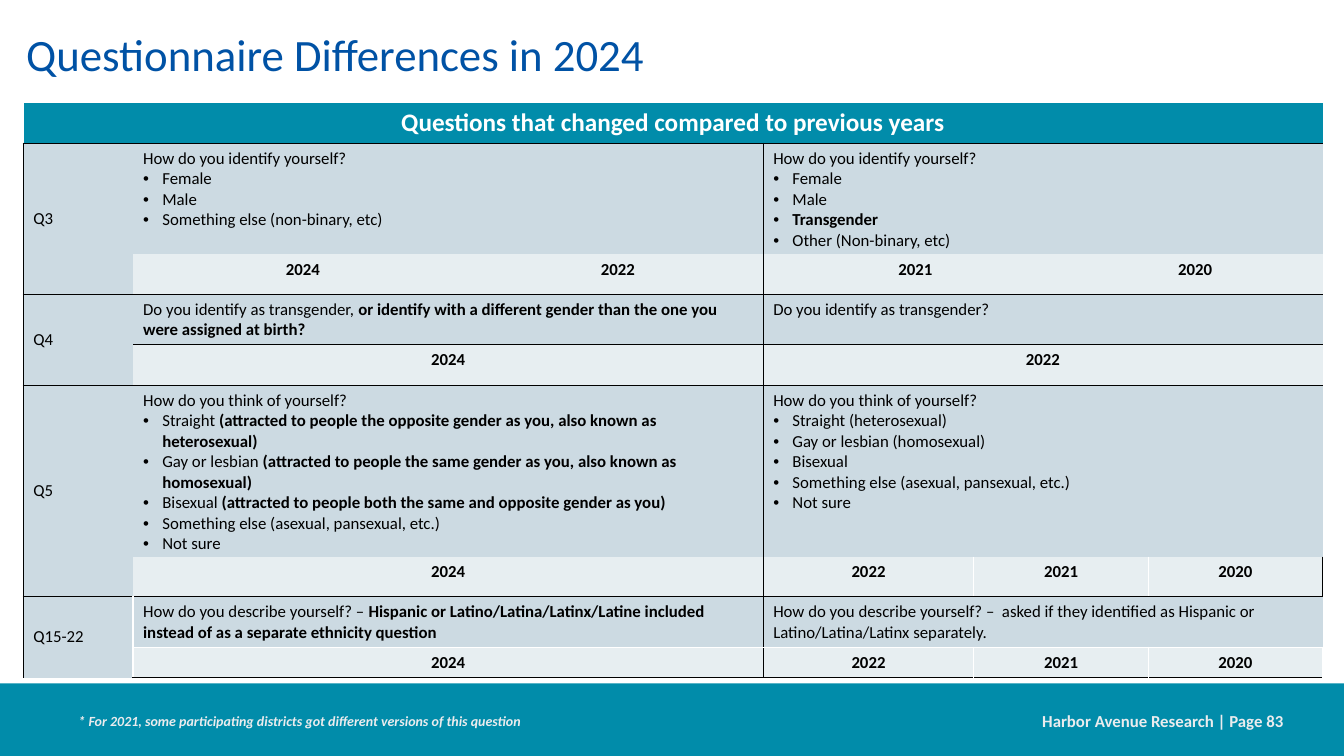
from dataclasses import dataclass

from lxml.etree import SubElement
from pptx import Presentation
from pptx.dml.color import RGBColor
from pptx.enum.shapes import MSO_SHAPE
from pptx.enum.text import MSO_ANCHOR as Anchor, PP_ALIGN as Align
from pptx.oxml.ns import qn
from pptx.util import Inches, Pt

TITLE = "Questionnaire Differences in 2024"
HEADING = "Questions that changed compared to previous years"
FOOTNOTE = "* For 2021, some participating districts got different versions of this question"
PAGE_LABEL = "Harbor Avenue Research | Page 83"

# Text after "|" is bold. Borders run left, right, top, bottom: K dark, W light, - none.
QUESTIONS = [
    ("Q3", "K-KK",
     [(1, 2, "-KK-", ["How do you identify yourself?", "Female", "Male",
                      "Something else (non-binary, etc)"]),
      (3, 4, "KKK-", ["How do you identify yourself?", "Female", "Male",
                      "|Transgender", "Other (Non-binary, etc)"])],
     [(1, 1, "---K", ["|2024"]), (2, 1, "-K-K", ["|2022"]),
      (3, 2, "K--K", ["|2021"]), (5, 2, "---K", ["|2020"])]),
    ("Q4", "K-KK",
     [(1, 2, "-KKK", ["Do you identify as transgender, |or identify with a different "
                      "gender than the one you were assigned at birth?"]),
      (3, 4, "KWKK", ["Do you identify as transgender?"])],
     [(1, 2, "-KKK", ["|2024"]), (3, 4, "KWKK", ["|2022"])]),
    ("Q5", "K-KK",
     [(1, 2, "-KK-", ["How do you think of yourself?",
                      "Straight |(attracted to people the opposite gender as you, "
                      "also known as heterosexual)",
                      "Gay or lesbian |(attracted to people the same gender as you, "
                      "also known as homosexual)",
                      "Bisexual |(attracted to people both the same and opposite gender as you)",
                      "Something else (asexual, pansexual, etc.)", "Not sure"]),
      (3, 4, "KWK-", ["How do you think of yourself?", "Straight (heterosexual)",
                      "Gay or lesbian (homosexual)", "Bisexual",
                      "Something else (asexual, pansexual, etc.)", "Not sure"])],
     [(1, 2, "-K-K", ["|2024"]), (3, 1, "KW-K", ["|2022"]),
      (4, 2, "WW-K", ["|2021"]), (6, 1, "WK-K", ["|2020"])]),
    ("Q15-22", "KWKK",
     [(1, 2, "WKKW", ["How do you describe yourself? – |Hispanic or Latino/Latina/Latinx/"
                      "Latine included instead of as a separate ethnicity question"]),
      (3, 4, "KKKW", ["How do you describe yourself? –  asked if they identified as "
                      "Hispanic or Latino/Latina/Latinx separately."])],
     [(1, 2, "WKWK", ["|2024"]), (3, 1, "KWWK", ["|2022"]),
      (4, 2, "WWWK", ["|2021"]), (6, 1, "WWWK", ["|2020"])]),
]

WIDTH, HEIGHT = 13.33, 7.5
COLUMNS = [1.09, 3.37, 2.88, 2.09, 0.93, 0.8, 1.73]
ROWS = [0.39, 1.1, 0.4, 0.5, 0.4, 1.7, 0.4, 0.5, 0.3]
BAR_TOP = 6.78
INDENT = 0.19


@dataclass(frozen=True)
class Theme:
    font: str = "Calibri"
    teal: str = "018CAA"
    blue: str = "0052A5"
    pale: str = "EBECEE"
    white: str = "FFFFFF"
    black: str = "000000"
    question: str = "CCDAE2"
    years: str = "E7EEF1"
    title_size: int = 32
    heading_size: int = 18
    body_size: int = 12
    note_size: int = 10


theme = Theme()


def add_span(para, text, size, color, bold=False, italic=False):
    span = para.add_run()
    span.text = text
    font = span.font
    font.name, font.size, font.bold, font.italic = theme.font, Pt(size), bold, italic
    font.color.rgb = RGBColor.from_string(color)


def add_bullet(para):
    props = para._p.get_or_add_pPr()
    props.set("marL", str(Inches(INDENT)))
    props.set("indent", str(-Inches(INDENT)))
    SubElement(props, qn("a:buFont")).set("typeface", "Arial")
    SubElement(props, qn("a:buChar")).set("char", "•")


def set_border(cell, side, code):
    line = SubElement(cell._tc.get_or_add_tcPr(), qn(f"a:ln{side}"))
    line.set("w", str(Pt(1)))
    if code == "-":
        SubElement(line, qn("a:noFill"))
    else:
        fill = SubElement(line, qn("a:solidFill"))
        color = theme.black if code == "K" else theme.white
        SubElement(fill, qn("a:srgbClr")).set("val", color)


def place_cell(table, row, col, height, width, borders, fill):
    bottom, right = row + height - 1, col + width - 1
    for r in range(row, bottom + 1):
        for c in range(col, right + 1):
            cell = table.cell(r, c)
            edges = (c == col, c == right, r == row, r == bottom)
            for side, code, on_edge in zip("LRTB", borders, edges):
                set_border(cell, side, code if on_edge else "-")
            cell.fill.solid()
            cell.fill.fore_color.rgb = RGBColor.from_string(fill)
    origin = table.cell(row, col)
    if height * width > 1:
        origin.merge(table.cell(bottom, right))
    return origin


def fill_cell(cell, lines, align=Align.LEFT, size=theme.body_size, color=theme.black):
    frame = cell.text_frame
    for number, text in enumerate(lines):
        para = frame.add_paragraph() if number else frame.paragraphs[0]
        para.alignment = align
        if number:
            add_bullet(para)
        for part, words in enumerate(text.split("|")):
            if words:
                add_span(para, words, size, color, bold=part == 1)


def add_label(slide, text, area, size, align, anchor, italic=False):
    box = slide.shapes.add_textbox(*map(Inches, area))
    box.text_frame.word_wrap = True
    box.text_frame.vertical_anchor = anchor
    para = box.text_frame.paragraphs[0]
    para.alignment = align
    add_span(para, text, size, theme.pale, bold=True, italic=italic)


def add_title(slide):
    title = slide.shapes.title
    title.left, title.top, title.width, title.height = map(Inches, (0.16, 0.24, 12.98, 0.66))
    title.text_frame.vertical_anchor = Anchor.MIDDLE
    para = title.text_frame.paragraphs[0]
    para.alignment = Align.LEFT
    para.line_spacing = 0.9
    add_span(para, TITLE, theme.title_size, theme.blue)


def add_footer(slide):
    bar = slide.shapes.add_shape(MSO_SHAPE.RECTANGLE, 0, Inches(BAR_TOP),
                                 Inches(WIDTH), Inches(HEIGHT - BAR_TOP))
    bar.shadow.inherit = False
    bar.fill.solid()
    bar.fill.fore_color.rgb = RGBColor.from_string(theme.teal)
    bar.line.fill.background()
    add_label(slide, PAGE_LABEL, (10.21, 6.95, 2.62, 0.4), theme.body_size,
              Align.RIGHT, Anchor.MIDDLE)
    add_label(slide, FOOTNOTE, (0.68, 7.02, 6.76, 0.27), theme.note_size,
              Align.LEFT, Anchor.TOP, italic=True)


def add_questions(slide):
    table = slide.shapes.add_table(len(ROWS), len(COLUMNS), Inches(0.23), Inches(1.02),
                                   Inches(sum(COLUMNS)), Inches(sum(ROWS))).table
    table.first_row = table.horz_banding = False
    for column, width in zip(table.columns, COLUMNS):
        column.width = Inches(width)
    for row, height in zip(table.rows, ROWS):
        row.height = Inches(height)
    heading = place_cell(table, 0, 0, 1, len(COLUMNS), "WWWK", theme.teal)
    fill_cell(heading, ["|" + HEADING], Align.CENTER, theme.heading_size, theme.white)
    for index, (name, borders, wordings, years) in enumerate(QUESTIONS):
        top = 1 + 2 * index
        label = place_cell(table, top, 0, 2, 1, borders, theme.question)
        label.vertical_anchor = Anchor.MIDDLE
        fill_cell(label, [name])
        bands = ((wordings, theme.question, Align.LEFT), (years, theme.years, Align.CENTER))
        for offset, (entries, fill, align) in enumerate(bands):
            for col, width, edges, lines in entries:
                cell = place_cell(table, top + offset, col, 1, width, edges, fill)
                fill_cell(cell, lines, align)


def main():
    deck = Presentation()
    deck.slide_width, deck.slide_height = Inches(WIDTH), Inches(HEIGHT)
    page = deck.slides.add_slide(deck.slide_layouts[5])
    add_title(page)
    add_footer(page)
    add_questions(page)
    deck.save("out.pptx")


if __name__ == "__main__":
    main()
